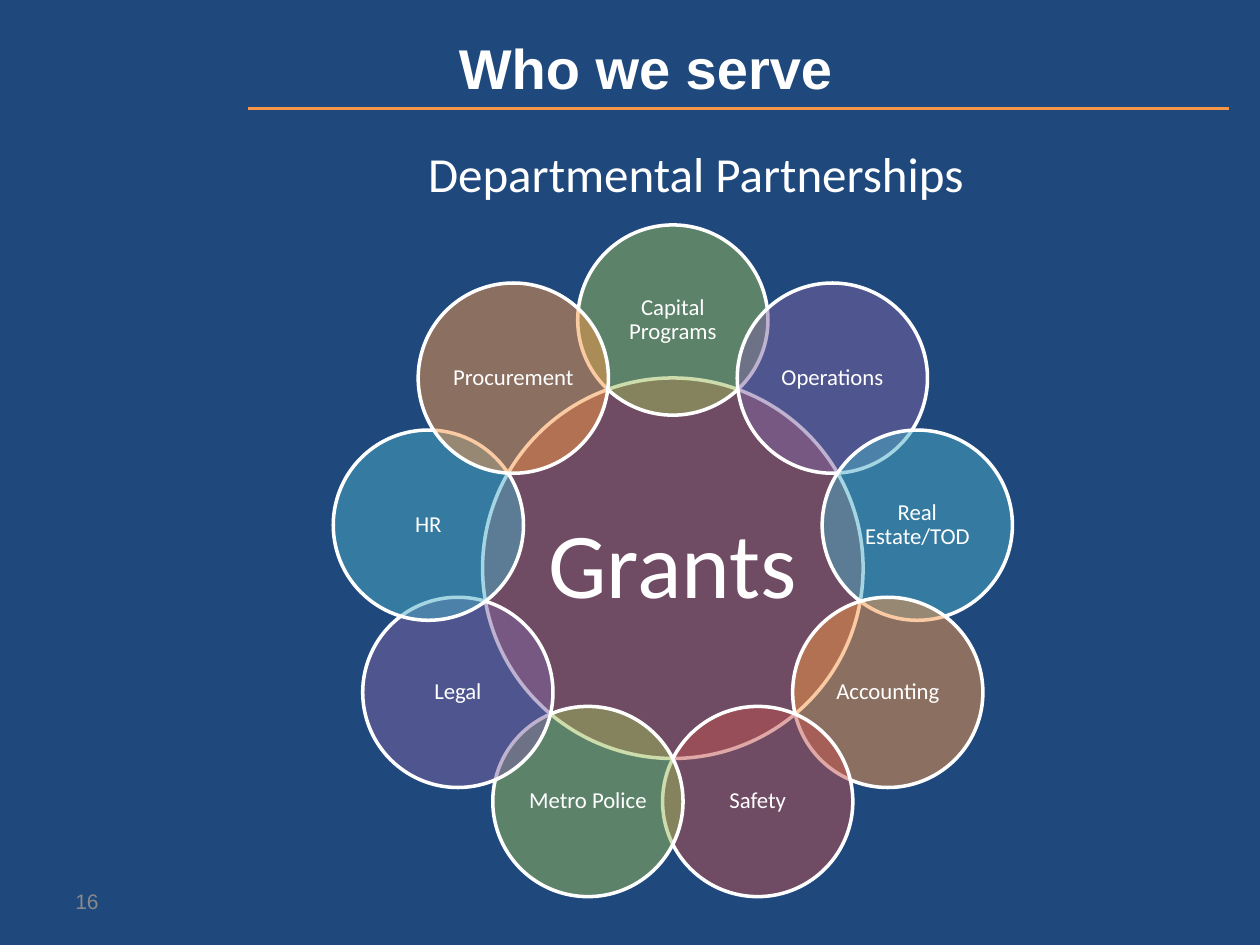
"""Build the slide showing the departments that the Grants office serves."""
from dataclasses import dataclass
from math import cos, radians, sin

from lxml.etree import SubElement
from pptx import Presentation
from pptx.dml.color import RGBColor
from pptx.enum.shapes import MSO_CONNECTOR, MSO_SHAPE
from pptx.enum.text import MSO_ANCHOR as Anchor, MSO_AUTO_SIZE as AutoSize, PP_ALIGN as Align
from pptx.oxml.ns import qn
from pptx.util import Inches, Pt


@dataclass(frozen=True)
class Theme:
    background: str = "1F497D"
    white: str = "FFFFFF"
    muted: str = "898989"
    red: str = "C0504D"
    green: str = "9BBB59"
    purple: str = "8064A2"
    teal: str = "4BACC6"
    orange: str = "F79646"
    heading_font: str = "Arial"
    body_font: str = "Calibri"
    title_size: float = 32
    subtitle_size: float = 28
    hub_size: float = 53
    label_size: float = 13
    number_size: float = 12
    line_width: float = 2
    opacity: int = 50


@dataclass(frozen=True)
class TextStyle:
    font: str
    size: float
    color: str
    bold: bool = False
    align: Align = Align.LEFT


@dataclass(frozen=True)
class Label:
    text: str
    left: float
    top: float
    width: float
    height: float
    style: TextStyle
    anchor: Anchor = Anchor.TOP
    fit: AutoSize = AutoSize.SHAPE_TO_FIT_TEXT


@dataclass(frozen=True)
class Circle:
    text: str
    center_x: float
    center_y: float
    diameter: float
    color: str
    size: float
    inset: float


THEME = Theme()
HUB_X, HUB_Y = 5.34, 4.51
HUB_DIAMETER, PETAL_DIAMETER, ORBIT = 3.02, 1.51, 1.97

LABELS = [
    Label("16", 0.5, 6.95, 2.33, 0.4,
          TextStyle(THEME.heading_font, THEME.number_size, THEME.muted), Anchor.MIDDLE, AutoSize.NONE),
    Label("Who we serve", 1.12, 0.22, 8.01, 0.64,
          TextStyle(THEME.heading_font, THEME.title_size, THEME.white, True, Align.CENTER)),
    Label("Departmental Partnerships", 3.3, 1.09, 4.56, 0.57,
          TextStyle(THEME.body_font, THEME.subtitle_size, THEME.white)),
]

DEPARTMENTS = [
    ("Capital Programs", THEME.green),
    ("Operations", THEME.purple),
    ("Real Estate/TOD", THEME.teal),
    ("Accounting", THEME.orange),
    ("Safety", THEME.red),
    ("Metro Police", THEME.green),
    ("Legal", THEME.purple),
    ("HR", THEME.teal),
    ("Procurement", THEME.orange),
]


def rgb(color: str) -> RGBColor:
    """Turn a hex string into a colour."""
    return RGBColor.from_string(color)


def write(paragraph, text: str, style: TextStyle) -> None:
    """Fill a paragraph with styled text."""
    paragraph.text = text
    paragraph.alignment = style.align
    font = paragraph.font
    font.name, font.size, font.bold = style.font, Pt(style.size), style.bold
    font.color.rgb = rgb(style.color)


def draw_label(slide, label: Label) -> None:
    """Add a text box."""
    box = slide.shapes.add_textbox(*map(Inches, (label.left, label.top, label.width, label.height)))
    frame = box.text_frame
    frame.word_wrap = True
    frame.auto_size = label.fit
    frame.vertical_anchor = label.anchor
    write(frame.paragraphs[0], label.text, label.style)


def draw_rule(slide) -> None:
    """Add the line under the title."""
    rule = slide.shapes.add_connector(
        MSO_CONNECTOR.STRAIGHT, *map(Inches, (9.75, 0.86, 1.97, 0.86)))
    rule.line.color.rgb = rgb(THEME.orange)
    rule.line.width = Pt(THEME.line_width)
    SubElement(rule._element.spPr, qn("a:effectLst"))


def draw_circle(shapes, circle: Circle) -> None:
    """Add a translucent circle with its name inside."""
    radius = circle.diameter / 2
    shape = shapes.add_shape(
        MSO_SHAPE.OVAL, Inches(circle.center_x - radius), Inches(circle.center_y - radius),
        Inches(circle.diameter), Inches(circle.diameter))
    shape.shadow.inherit = False
    shape.fill.solid()
    shape.fill.fore_color.rgb = rgb(circle.color)
    fill_color = shape._element.spPr.find(qn("a:solidFill")).find(qn("a:srgbClr"))
    SubElement(fill_color, qn("a:alpha")).set("val", str(THEME.opacity * 1000))
    shape.line.color.rgb = rgb(THEME.white)
    shape.line.width = Pt(THEME.line_width)
    frame = shape.text_frame
    frame.word_wrap = True
    frame.vertical_anchor = Anchor.MIDDLE
    frame.margin_left = frame.margin_right = Inches(circle.inset)
    frame.margin_top = frame.margin_bottom = Inches(circle.inset)
    paragraph = frame.paragraphs[0]
    write(paragraph, circle.text,
          TextStyle(THEME.body_font, circle.size, THEME.white, align=Align.CENTER))
    paragraph.line_spacing = 0.9


def draw_flower(slide) -> None:
    """Add the hub and the ring of departments, clockwise from the top."""
    shapes = slide.shapes.add_group_shape().shapes
    draw_circle(shapes, Circle("Grants", HUB_X, HUB_Y, HUB_DIAMETER, THEME.red, THEME.hub_size, 0.07))
    for index, (name, color) in enumerate(DEPARTMENTS):
        angle = radians(360 / len(DEPARTMENTS) * index)
        draw_circle(shapes, Circle(
            name, HUB_X + ORBIT * sin(angle), HUB_Y - ORBIT * cos(angle),
            PETAL_DIAMETER, color, THEME.label_size, 0.02))


def main() -> None:
    """Build and save the presentation."""
    presentation = Presentation()
    presentation.slide_width, presentation.slide_height = Inches(10), Inches(7.5)
    slide = presentation.slides.add_slide(presentation.slide_layouts[6])
    slide.background.fill.solid()
    slide.background.fill.fore_color.rgb = rgb(THEME.background)
    draw_rule(slide)
    for label in LABELS:
        draw_label(slide, label)
    draw_flower(slide)
    presentation.save("out.pptx")


if __name__ == "__main__":
    main()
